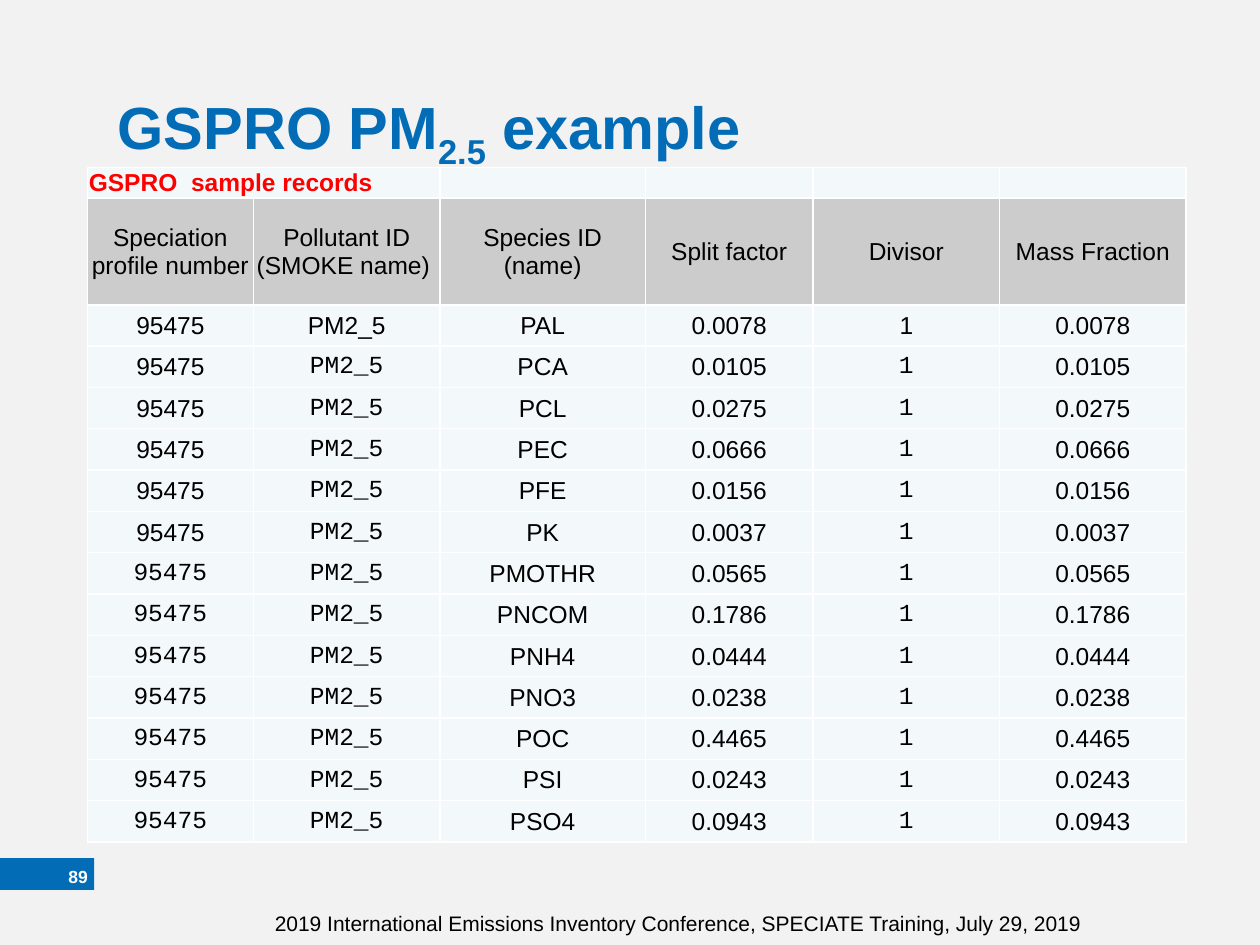
from dataclasses import dataclass

from lxml.etree import SubElement
from pptx import Presentation
from pptx.dml.color import RGBColor as RGB
from pptx.enum.shapes import MSO_SHAPE as Shape
from pptx.enum.text import MSO_ANCHOR as Anchor, MSO_AUTO_SIZE as AutoSize, PP_ALIGN as Align
from pptx.oxml.ns import qn
from pptx.util import Cm, Pt


@dataclass(frozen=True)
class Theme:
    sans: str = "Arial"
    mono: str = "Courier New"
    page: str = "F2F2F2"
    blue: str = "026CB6"
    red: str = "FF0000"
    black: str = "000000"
    white: str = "FFFFFF"
    header: str = "CCCCCC"
    body: str = "F3F9FA"
    title_size: int = 34
    table_size: int = 14
    footer_size: int = 12
    number_size: int = 10


THEME = Theme()

COLUMN_WIDTHS = (3.35, 3.76, 4.14, 3.38, 3.76, 3.76)
CAPTION_HEIGHT, HEADER_HEIGHT, BODY_HEIGHT = 0.58, 2.15, 10.84
HEADERS = ("Speciation profile number", "Pollutant ID (SMOKE name) ", "Species ID (name)",
           "Split factor", "Divisor", "Mass Fraction")
SPECIES_FRACTIONS = (
    ("PAL", "0.0078"), ("PCA", "0.0105"), ("PCL", "0.0275"), ("PEC", "0.0666"),
    ("PFE", "0.0156"), ("PK", "0.0037"), ("PMOTHR", "0.0565"), ("PNCOM", "0.1786"),
    ("PNH4", "0.0444"), ("PNO3", "0.0238"), ("POC", "0.4465"), ("PSI", "0.0243"),
    ("PSO4", "0.0943"),
)
# Column index -> first record set in the monospaced font
MONO_FROM = {0: 6, 1: 1, 4: 1}


def add_text(paragraph, text, *, size, color=THEME.black, font=THEME.sans, bold=False,
             align=Align.LEFT, baseline=0):
    """Append a formatted run; baseline is a percentage, negative for subscript."""
    paragraph.alignment = align
    run = paragraph.add_run()
    run.text = text
    run.font.name, run.font.size, run.font.bold = font, Pt(size), bold
    run.font.color.rgb = RGB.from_string(color)
    if baseline:
        run.font._element.set("baseline", str(baseline * 1000))


def set_borders(cell, color, width=1):
    properties = cell._tc.get_or_add_tcPr()
    for side in ("lnL", "lnR", "lnT", "lnB"):
        line = SubElement(properties, qn(f"a:{side}"), w=str(Pt(width)))
        fill = SubElement(line, qn("a:solidFill"))
        SubElement(fill, qn("a:srgbClr"), val=color)


class SlideBuilder:
    def __init__(self, theme, slide):
        self.theme = theme
        self.slide = slide
        slide.background.fill.solid()
        slide.background.fill.fore_color.rgb = RGB.from_string(theme.page)

    def title(self, parts, left, top, width, height):
        """Fill the title from (text, baseline) pairs."""
        title = self.slide.shapes.title
        title.left, title.top, title.width, title.height = map(Cm, (left, top, width, height))
        frame = title.text_frame
        frame.auto_size, frame.vertical_anchor = AutoSize.NONE, Anchor.TOP
        frame.margin_top = Cm(0.12)
        for text, baseline in parts:
            add_text(frame.paragraphs[0], text, size=self.theme.title_size,
                     color=self.theme.blue, bold=True, baseline=baseline)

    def bar(self, left, top, width, height):
        bar = self.slide.shapes.add_shape(Shape.RECTANGLE, *map(Cm, (left, top, width, height)))
        bar.shadow.inherit = False
        bar.fill.solid()
        bar.fill.fore_color.rgb = RGB.from_string(self.theme.blue)
        bar.line.fill.background()

    def label(self, text, left, top, width, height, *, margin=None, anchor=Anchor.TOP, **style):
        box = self.slide.shapes.add_textbox(*map(Cm, (left, top, width, height)))
        frame = box.text_frame
        frame.word_wrap, frame.vertical_anchor = True, anchor
        if margin is not None:
            frame.margin_left = frame.margin_right = Cm(margin)
            frame.margin_top = frame.margin_bottom = Cm(margin)
        add_text(frame.paragraphs[0], text, **style)

    def cell(self, cell, text, fill, **style):
        set_borders(cell, self.theme.white)
        cell.fill.solid()
        cell.fill.fore_color.rgb = RGB.from_string(fill)
        cell.vertical_anchor = Anchor.MIDDLE
        cell.margin_left = cell.margin_right = Cm(0.03)
        cell.margin_top = Cm(0.02)
        cell.margin_bottom = 0
        paragraph = cell.text_frame.paragraphs[0]
        size = self.theme.table_size
        if text:
            add_text(paragraph, text, size=size, **style)
        else:  # keeps an empty cell from stretching its row
            SubElement(paragraph._p, qn("a:endParaRPr"), sz=str(size * 100))

    def records_table(self, caption, headers, records, left, top):
        theme = self.theme
        heights = [CAPTION_HEIGHT, HEADER_HEIGHT] + [BODY_HEIGHT / len(records)] * len(records)
        frame = self.slide.shapes.add_table(
            len(heights), len(headers), Cm(left), Cm(top),
            Cm(sum(COLUMN_WIDTHS)), Cm(sum(heights)))
        table = frame.table
        table.first_row = table.horz_banding = False
        for column, width in zip(table.columns, COLUMN_WIDTHS):
            column.width = Cm(width)
        for row, height in zip(table.rows, heights):
            row.height = Cm(height)

        for c, header in enumerate(headers):
            self.cell(table.cell(0, c), "" if c else caption, theme.body,
                      color=theme.red, bold=True)
            self.cell(table.cell(1, c), header, theme.header, align=Align.CENTER)
        table.cell(0, 0).merge(table.cell(0, 1))
        for r, record in enumerate(records):
            for c, value in enumerate(record):
                mono = r >= MONO_FROM.get(c, len(records))
                self.cell(table.cell(r + 2, c), value, theme.body, align=Align.CENTER,
                          font=theme.mono if mono else theme.sans)


def main():
    deck = Presentation()
    deck.slide_width, deck.slide_height = Cm(25.4), Cm(19.05)
    page = SlideBuilder(THEME, deck.slides.add_slide(deck.slide_layouts[5]))

    page.bar(0, 17.3, 1.9, 0.64)
    page.title((("GSPRO PM", 0), ("2.5", -25), (" example", 0)), 2.12, 1.7, 21.17, 2.74)
    page.label("2019 International Emissions Inventory Conference, SPECIATE Training, July 29, 2019",
               5.29, 18.24, 17.15, 1.27, size=THEME.footer_size)
    page.label("89", 0.08, 17.35, 1.69, 0.64, margin=0, anchor=Anchor.MIDDLE,
               size=THEME.number_size, color=THEME.white, bold=True, align=Align.RIGHT)
    records = [("95475", "PM2_5", species, fraction, "1", fraction)
               for species, fraction in SPECIES_FRACTIONS]
    page.records_table("GSPRO  sample records", HEADERS, records, 1.76, 3.38)

    deck.save("out.pptx")


if __name__ == "__main__":
    main()
